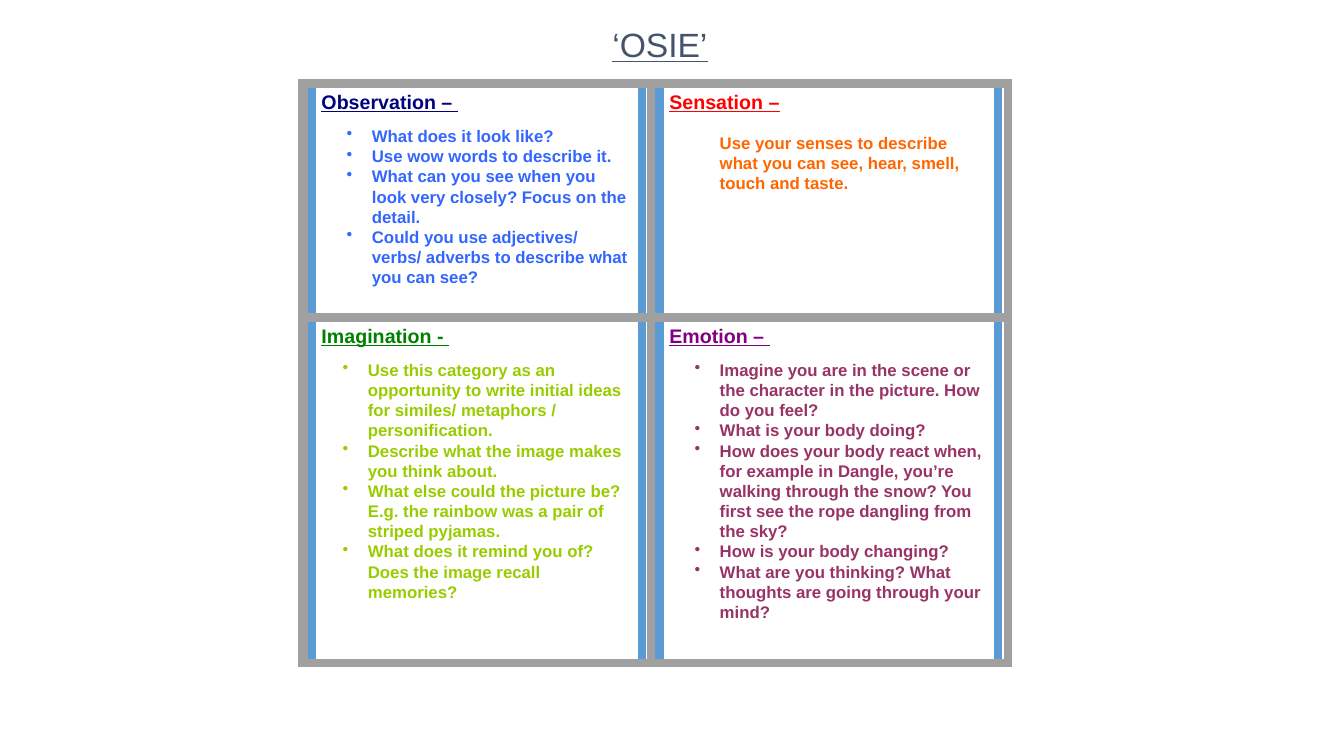
from lxml.etree import SubElement
from pptx import Presentation
from pptx.dml.color import RGBColor
from pptx.enum.shapes import MSO_SHAPE
from pptx.enum.text import MSO_ANCHOR, MSO_AUTO_SIZE, PP_ALIGN
from pptx.oxml.ns import qn
from pptx.util import Emu, Pt

EMU_PER_PX = 9144
FONT = "Arial"
BLUE = "5B9BD5"
GREY = "A0A0A0"
COLUMNS = [((309, 328), (301, 345)), ((654, 336), (646, 354))]
ROWS = [(83, 232), (315, 343)]

CATEGORIES = [
    ("Observation – ", "000080", "3366FF", 50, 9, True, [
        "What does it look like?",
        "Use wow words to describe it.",
        "What can you see when you look very closely? Focus on the detail.",
        "Could you use adjectives/ verbs/ adverbs to describe what you can see?",
    ]),
    ("Sensation –", "FF0000", "FF6600", 50, 14, False, [
        "Use your senses to describe what you can see, hear, smell, touch and taste.",
    ]),
    ("Imagination - ", "008000", "99CC00", 46, 9, True, [
        "Use this category as an opportunity to write initial ideas for similes/ "
        "metaphors / personification.",
        "Describe what the image makes you think about.",
        "What else could the picture be? E.g. the rainbow was a pair of striped pyjamas.",
        "What does it remind you of? Does the image recall memories?",
    ]),
    ("Emotion – ", "800080", "993366", 50, 9, True, [
        "Imagine you are in the scene or the character in the picture. How do you feel?",
        "What is your body doing?",
        "How does your body react when, for example in Dangle, you’re walking through "
        "the snow? You first see the rope dangling from the sky?",
        "How is your body changing?",
        "What are you thinking? What thoughts are going through your mind?",
    ]),
]


def px(length):
    return Emu(length * EMU_PER_PX)


def color(value):
    return RGBColor.from_string(value)


def style(paragraph, size, hue, bold=False, underline=False):
    font = paragraph.font
    font.name = FONT
    font.size = Pt(size)
    font.color.rgb = color(hue)
    font.bold = bold
    font.underline = underline


def add_frame(slide, left, top, width, height, hue):
    frame = slide.shapes.add_shape(
        MSO_SHAPE.RECTANGLE, px(left), px(top), px(width), px(height))
    frame.shadow.inherit = False
    frame.fill.background()
    frame.line.color.rgb = color(hue)
    frame.line.width = Pt(6)
    SubElement(frame.line._get_or_add_ln(), qn("a:miter"), lim="800000")
    return frame


def set_indent(paragraph, margin, bulleted):
    properties = paragraph._p.get_or_add_pPr()
    properties.set("marL", str(px(margin)))
    properties.set("indent", str(px(-25 if bulleted else 0)))
    if bulleted:
        SubElement(properties, qn("a:buChar"), char="•")


def write_category(frame, heading, heading_hue, prompt_hue, margin, gap, bulleted, prompts):
    body = frame.text_frame
    body.word_wrap = True
    body.vertical_anchor = MSO_ANCHOR.TOP
    body.margin_left = body.margin_right = px(10)
    body.margin_top, body.margin_bottom = px(6), px(0)
    title = body.paragraphs[0]
    title.text = heading
    title.alignment = PP_ALIGN.LEFT
    title.space_after = Pt(gap)
    style(title, 14, heading_hue, bold=True, underline=True)
    for prompt in prompts:
        line = body.add_paragraph()
        line.text = prompt
        line.alignment = PP_ALIGN.LEFT
        line.line_spacing = Pt(14.4)
        style(line, 12, prompt_hue, bold=True)
        set_indent(line, margin, bulleted)


def write_title(slide, text):
    title = slide.shapes.title
    title.left, title.top, title.width, title.height = px(542), px(19), px(225), px(50)
    body = title.text_frame
    body.text = text
    body.auto_size = MSO_AUTO_SIZE.NONE
    body.vertical_anchor = MSO_ANCHOR.MIDDLE
    body.paragraphs[0].alignment = PP_ALIGN.CENTER
    style(body.paragraphs[0], 24, "44546A", underline=True)


def main():
    deck = Presentation()
    deck.slide_width, deck.slide_height = px(1333), px(750)
    slide = deck.slides.add_slide(deck.slide_layouts[5])
    write_title(slide, "‘OSIE’")
    for index, category in enumerate(CATEGORIES):
        top, height = ROWS[index // 2]
        (left, width), (border_left, border_width) = COLUMNS[index % 2]
        write_category(add_frame(slide, left, top, width, height, BLUE), *category)
        add_frame(slide, border_left, top, border_width, height, GREY)
    add_frame(slide, 300, 83, 700, 575, GREY)
    deck.save("out.pptx")


if __name__ == "__main__":
    main()
